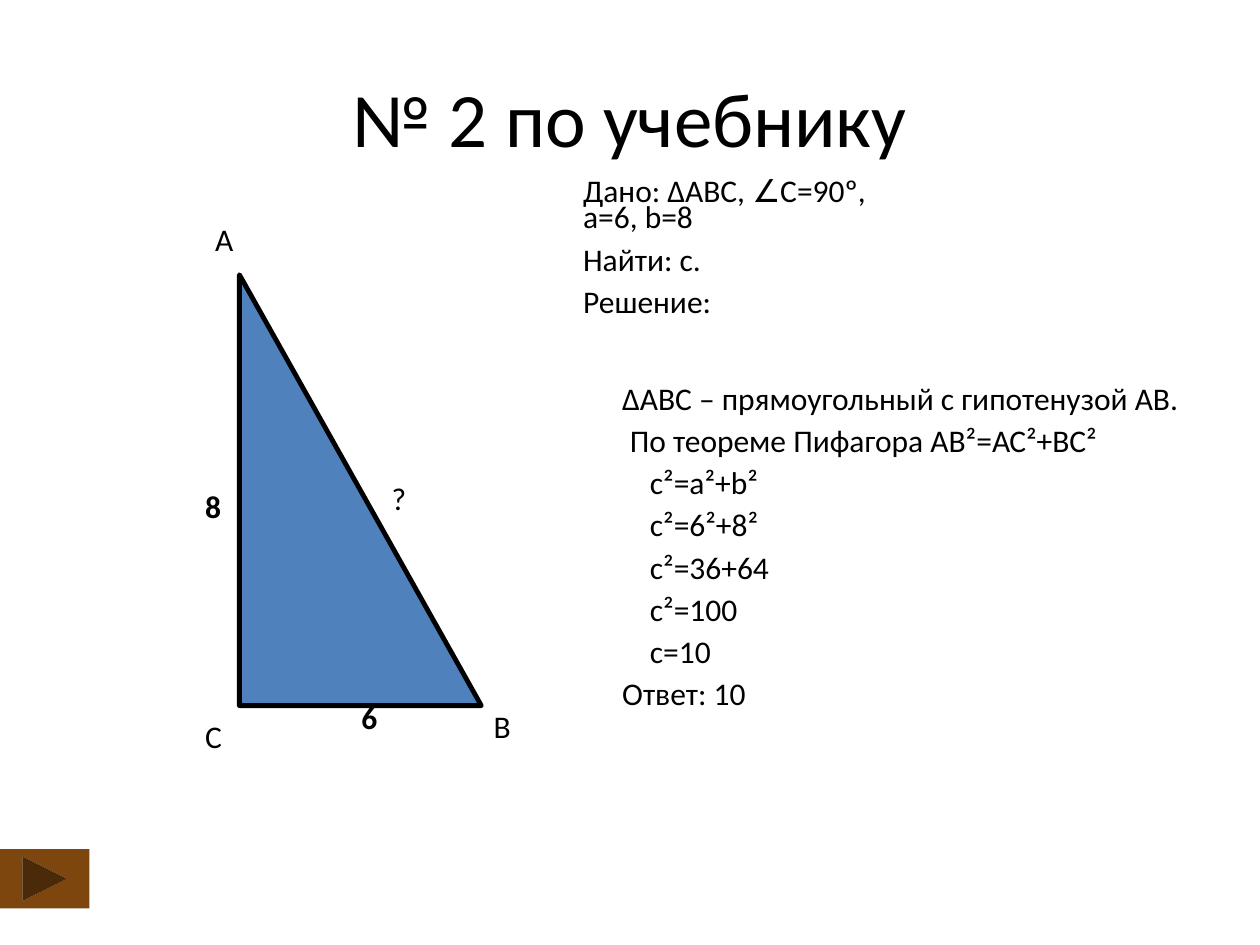
"""Build a slide that solves a right triangle with the Pythagorean theorem."""
from pptx import Presentation
from pptx.dml.color import RGBColor
from pptx.enum.shapes import MSO_SHAPE
from pptx.enum.text import MSO_ANCHOR, PP_ALIGN
from pptx.util import Inches, Pt

TRIANGLE = MSO_SHAPE.RIGHT_TRIANGLE
NEXT_BUTTON = MSO_SHAPE.ACTION_BUTTON_FORWARD_OR_NEXT
MIDDLE = MSO_ANCHOR.MIDDLE
CENTER = PP_ALIGN.CENTER
LEFT = PP_ALIGN.LEFT
FONT = "Calibri"
BLACK, BLUE, BROWN = "000000", "4F81BD", "7D460F"
LABEL_HEIGHT = 6.67
FORMULA_INDENT = 0.22

TITLE = "№ 2 по учебнику"
TITLE_AREA = (5, 4, 90, 16.67)
TRIANGLE_AREA = (19, 29.07, 19.2, 45.6)
BUTTON_AREA = (0, 89.87, 7.1, 6.27)
# text, left, top, width, bold
LABELS = [
    ("6", 27.7, 73.2, 3.7, True),
    ("8", 15.3, 50.93, 5.9, True),
    ("?", 30.1, 50, 3.5, False),
    ("С", 15.3, 75.2, 6.3, False),
    ("А", 16.1, 22.67, 6.3, False),
    ("В", 38.2, 74.13, 3.9, False),
]
GIVEN_AREA = (45.3, 18.53, 47.3, 16.67)
GIVEN = [
    ("Дано: ∆АВС, ∠С=90º,\nа=6, b=8", 0),
    ("Найти: с.", 0),
    ("Решение:", 0),
]
SOLUTION_AREA = (48.4, 40.53, 46.6, 38.13)
SOLUTION = [
    ("∆АВС – прямоугольный с гипотенузой АВ.", 0),
    ("По теореме Пифагора АВ²=АС²+ВС²", 0.06),
    ("с²=а²+b²", FORMULA_INDENT),
    ("с²=6²+8²", FORMULA_INDENT),
    ("с²=36+64", FORMULA_INDENT),
    ("с²=100", FORMULA_INDENT),
    ("c=10", FORMULA_INDENT),
    ("Ответ: 10", 0),
]


def color(value):
    return RGBColor.from_string(value)


def place(area):
    """Turn percentages of the slide into left, top, width and height."""
    sides = (deck.slide_width, deck.slide_height) * 2
    return [round(side * share / 100) for side, share in zip(sides, area)]


def write(para, text, size=18, bold=False):
    """Add text as runs, with a line break between its lines."""
    for number, line in enumerate(text.split("\n")):
        if number:
            para.add_line_break()
        span = para.add_run()
        span.text = line
        span.font.name = FONT
        span.font.size = Pt(size)
        span.font.bold = bold
        span.font.color.rgb = color(BLACK)


def add_box(area, wrap=True):
    box = page.shapes.add_textbox(*place(area))
    box.text_frame.word_wrap = wrap
    return box.text_frame


def add_lines(area, lines, wrap):
    """Add a block of tightly spaced, indented paragraphs."""
    frame = add_box(area, wrap)
    for number, (text, indent) in enumerate(lines):
        para = frame.add_paragraph() if number else frame.paragraphs[0]
        para.alignment = LEFT
        para.line_spacing = 0.7
        para.space_before = Pt(9 if number else 0)
        if indent:
            para._p.get_or_add_pPr().set("marL", str(Inches(indent)))
        write(para, text)


def add_figure(kind, area, fill):
    figure = page.shapes.add_shape(kind, *place(area))
    figure.shadow.inherit = False
    figure.fill.solid()
    figure.fill.fore_color.rgb = color(fill)
    return figure


deck = Presentation()
deck.slide_width, deck.slide_height = Inches(10), Inches(7.5)
page = deck.slides.add_slide(deck.slide_layouts[5])

title = page.shapes.title
title.left, title.top, title.width, title.height = place(TITLE_AREA)
title.text_frame.vertical_anchor = MIDDLE
title.text_frame.paragraphs[0].alignment = CENTER
write(title.text_frame.paragraphs[0], TITLE, 44)

triangle = add_figure(TRIANGLE, TRIANGLE_AREA, BLUE)
triangle.line.color.rgb = color(BLACK)
triangle.line.width = Pt(2.75)

for text, left, top, width, bold in LABELS:
    label = add_box((left, top, width, LABEL_HEIGHT))
    write(label.paragraphs[0], text, bold=bold)

add_lines(GIVEN_AREA, GIVEN, True)
add_figure(NEXT_BUTTON, BUTTON_AREA, BROWN).line.fill.background()
add_lines(SOLUTION_AREA, SOLUTION, False)

deck.save("out.pptx")
